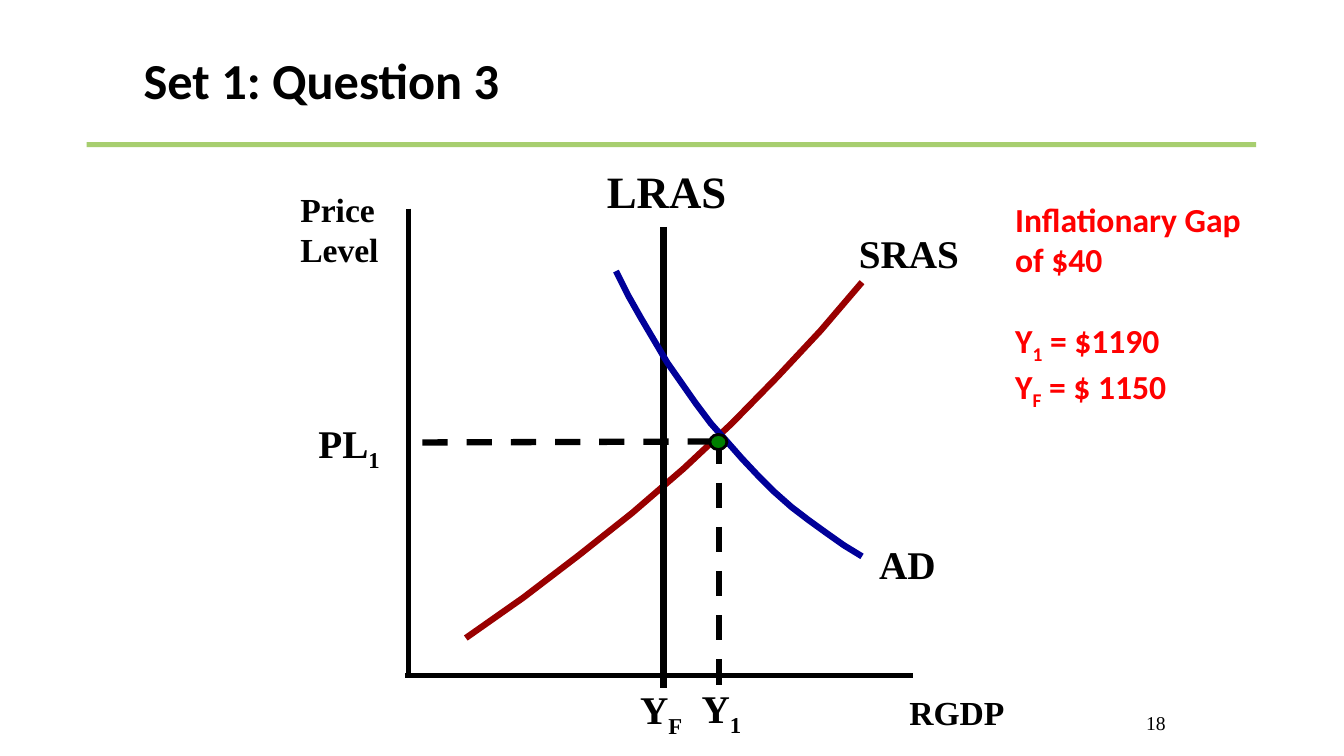
from pptx import Presentation
from pptx.dml.color import RGBColor
from pptx.enum import dml, shapes, text
from pptx.oxml.ns import qn
from pptx.util import Inches, Pt
from lxml import etree

HEX = {"black": "000000", "red": "FF0000", "rule": "A7CE6F",
       "sras": "990000", "ad": "000099", "dot": "008000"}
SERIF, SANS = "Times New Roman", "Calibri"

SRAS = [(4.62, 6.33), (5.19, 5.93), (5.74, 5.51), (6.27, 5.09), (6.78, 4.65),
        (7.26, 4.2), (7.71, 3.74), (8.14, 3.28), (8.55, 2.8)]
AD = [(6.11, 2.69), (6.23, 2.93), (6.36, 3.16), (6.49, 3.38), (6.62, 3.6),
      (6.76, 3.8), (6.9, 4), (7.05, 4.2), (7.21, 4.38), (7.36, 4.55),
      (7.52, 4.72), (7.68, 4.88), (7.85, 5.03), (8.02, 5.16), (8.2, 5.29),
      (8.37, 5.41), (8.55, 5.52)]


def color(name):
    return RGBColor.from_string(HEX[name])


def stroke(line, name, width):
    line.color.rgb = color(name)
    line.width = Pt(width)


def write(para, parts, size, font=SERIF, tint="black", bold=True):
    """Fill a paragraph; every second part is a subscript."""
    look = {"size": Pt(size), "name": font, "bold": bold}
    for i, part in enumerate(parts):
        run = para.add_run()
        run.text = part
        for key, value in look.items():
            setattr(run.font, key, value)
        run.font.color.rgb = color(tint)
        if i % 2:
            run._r.get_or_add_rPr().set("baseline", "-25000")


def add_box(slide, at, anchor=text.MSO_ANCHOR.TOP):
    frame = slide.shapes.add_textbox(*map(Inches, at)).text_frame
    frame.word_wrap = True
    frame.vertical_anchor = anchor
    return frame


def add_label(slide, at, parts, size, **look):
    para = add_box(slide, at).paragraphs[0]
    write(para, parts, size, **look)
    return para


def add_line(slide, ends, width=4.5, dash=False):
    line = slide.shapes.add_connector(
        shapes.MSO_CONNECTOR.STRAIGHT, *map(Inches, ends))
    stroke(line.line, "black", width)
    if dash:
        line.line.dash_style = dml.MSO_LINE.DASH
    etree.SubElement(line._element.spPr, qn("a:effectLst"))


def add_curve(slide, points, name):
    first, *rest = [(Inches(x), Inches(y)) for x, y in points]
    pen = slide.shapes.build_freeform(*first)
    pen.add_line_segments(rest, close=False)
    curve = pen.convert_to_shape()
    curve.shadow.inherit = False
    curve.fill.background()
    stroke(curve.line, name, 4.5)


def add_solid(slide, kind, at, name):
    shape = slide.shapes.add_shape(kind, *map(Inches, at))
    shape.shadow.inherit = False
    shape.fill.solid()
    shape.fill.fore_color.rgb = color(name)
    shape.line.fill.background()
    return shape


def set_title(slide, words):
    title = slide.shapes.title
    place = {"left": 0.21, "top": 0.5, "width": 5.96, "height": 0.57}
    for key, value in place.items():
        setattr(title, key, Inches(value))
    frame = title.text_frame
    frame.auto_size = text.MSO_AUTO_SIZE.NONE
    frame.vertical_anchor = text.MSO_ANCHOR.MIDDLE
    para = frame.paragraphs[0]
    para.alignment = text.PP_ALIGN.CENTER
    write(para, [words], 36, SANS)


def add_answer(slide):
    frame = add_box(slide, (9.97, 1.92, 2.66, 2.42))
    rows = [["Inflationary Gap of $40"], ["Y", "1", " = $1190"],
            ["Y", "F", " = $ 1150"]]
    for i, row in enumerate(rows):
        para = frame.add_paragraph() if i else frame.paragraphs[0]
        write(para, row, 24, SANS, "red")
    frame.paragraphs[1].space_before = Pt(29)


def main():
    deck = Presentation()
    deck.slide_width, deck.slide_height = Inches(13.33), Inches(7.5)
    slide = deck.slides.add_slide(deck.slide_layouts[5])
    set_title(slide, "Set 1: Question 3")
    add_solid(slide, shapes.MSO_SHAPE.RECTANGLE, (0.86, 1.41, 11.6, 0.05), "rule")

    add_line(slide, (4.05, 2.07, 4.05, 6.73), 4)
    add_line(slide, (4.02, 6.7, 9.06, 6.7), 4)
    axis = add_box(slide, (2.88, 1.76, 1.5, 1.03), text.MSO_ANCHOR.MIDDLE)
    write(axis.paragraphs[0], ["Price Level"], 24)

    add_curve(slide, SRAS, "sras")
    add_line(slide, (6.58, 2.25, 6.58, 6.83))
    for at, parts, size in [
            ((8.42, 2.23, 1.29, 0.57), ["SRAS"], 28),
            ((8.92, 6.82, 1.4, 0.5), ["RGDP"], 24),
            ((6.25, 6.75, 0.69, 0.57), ["Y", "F"], 28),
            ((3.06, 4.11, 1.02, 0.58), ["PL", "1"], 28),
            ((6.86, 6.74, 0.72, 0.57), ["Y", "1"], 28),
            ((5.92, 1.58, 1.88, 0.63), ["LRAS"], 32),
            ((8.62, 5.31, 0.9, 0.57), ["AD"], 28)]:
        add_label(slide, at, parts, size)

    add_line(slide, (7.07, 4.38, 4.09, 4.39), dash=True)
    add_line(slide, (7.13, 4.35, 7.13, 6.82), dash=True)
    add_curve(slide, AD, "ad")
    dot = add_solid(slide, shapes.MSO_SHAPE.FLOWCHART_CONNECTOR,
                    (7.04, 4.31, 0.17, 0.15), "dot")
    stroke(dot.line, "black", 2)

    add_answer(slide)
    page = add_label(slide, (9.58, 7, 2.08, 0.5), ["18"], 14, bold=False)
    page.alignment = text.PP_ALIGN.RIGHT
    deck.save("out.pptx")


if __name__ == "__main__":
    main()
